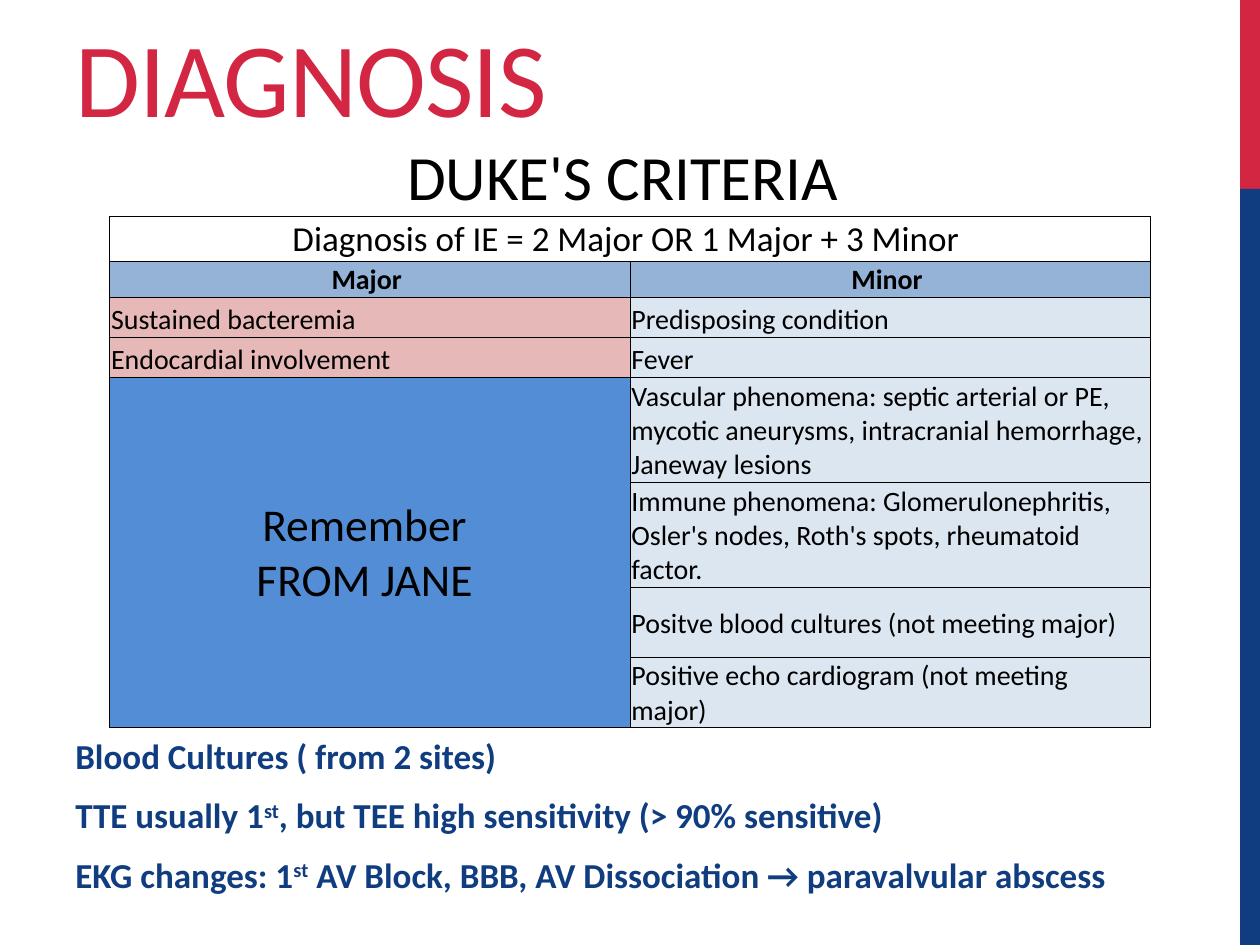
import pptx
import pptx.util
import pptx.dml.color
import pptx.enum.shapes
import pptx.enum.text
import pptx.oxml
import pptx.oxml.ns
from pptx.util import Cm, Pt

ANCHOR = pptx.enum.text.MSO_ANCHOR
ALIGN = pptx.enum.text.PP_ALIGN


def rgb(value):
    return pptx.dml.color.RGBColor.from_string(value)


def style(r, size, color, bold=False):
    r.font.name = "Calibri"
    r.font.size = Pt(size)
    r.font.bold = bold
    r.font.color.rgb = rgb(color)


prs = pptx.Presentation()
prs.slide_width, prs.slide_height = Cm(25.4), Cm(19.05)
s = prs.slides.add_slide(prs.slide_layouts[6])

# Side bars
for top, height, color in [(0, 3.81, "D22643"), (3.81, 15.24, "103D80")]:
    sp = s.shapes.add_shape(pptx.enum.shapes.MSO_SHAPE.RECTANGLE,
                            Cm(25), Cm(top), Cm(0.4), Cm(height))
    sp.shadow.inherit = False
    sp.fill.solid()
    sp.fill.fore_color.rgb = rgb(color)
    sp.line.fill.background()

# Title
tf = s.shapes.add_textbox(Cm(1.27), Cm(0.53), Cm(22.86), Cm(2.39)).text_frame
tf.word_wrap = True
tf.vertical_anchor = ANCHOR.BOTTOM
tf.text = "DIAGNOSIS"
r = tf.paragraphs[0].runs[0]
style(r, 60.3, "D22643")
r.font._element.set("spc", "-60")

# Notes below the table, with superscript ordinals
tf = s.shapes.add_textbox(Cm(1.27), Cm(14.68), Cm(22.86), Cm(4.24)).text_frame
tf.word_wrap = True
notes = [
    ["Blood Cultures ( from 2 sites)"],
    ["TTE usually 1", "st", ", but TEE high sensitivity (> 90% sensitive)"],
    ["EKG changes: 1", "st", " AV Block, BBB, AV Dissociation → paravalvular abscess"],
]
for i, parts in enumerate(notes):
    p = tf.paragraphs[0] if i == 0 else tf.add_paragraph()
    p.space_before, p.space_after = Pt(4), Pt(6)
    for part in parts:
        r = p.add_run()
        r.text = part
        style(r, 20, "103D80", bold=True)
        if part == "st":
            r.font._element.set("baseline", "30000")

# Criteria table: (text, size, fill, centred, anchor) for each cell
BLUE, PINK, PALE = "95B3D7", "E6B8B7", "DCE6F1"
MID, LOW = ANCHOR.MIDDLE, ANCHOR.BOTTOM
blank = ("", 16, None, False, MID)
rows = [
    (1.57, ("DUKE'S CRITERIA ", 36, None, True, LOW), blank),
    (0.9, ("Diagnosis of IE = 2 Major OR 1 Major + 3 Minor ", 20, None, True, LOW), blank),
    (0.72, ("Major ", 16, BLUE, True, MID), ("Minor ", 16, BLUE, True, MID)),
    (0.81, ("Sustained bacteremia", 16, PINK, False, LOW),
     ("Predisposing condition", 16, PALE, False, LOW)),
    (0.81, ("Endocardial involvement", 16, PINK, False, LOW), ("Fever", 16, PALE, False, LOW)),
    (2.12, ("Remember \nFROM JANE ", 26, "538DD5", True, MID),
     ("Vascular phenomena: septic arterial or PE, mycotic aneurysms, "
      "intracranial hemorrhage, Janeway lesions", 16, PALE, False, MID)),
    (2.12, blank, ("Immune phenomena: Glomerulonephritis, Osler's nodes, "
                   "Roth's spots, rheumatoid factor.", 16, PALE, False, MID)),
    (1.41, blank, ("Positve blood cultures (not meeting major)", 16, PALE, False, MID)),
    (1.41, blank, ("Positive echo cardiogram (not meeting major)", 16, PALE, False, MID)),
]
tbl = s.shapes.add_table(len(rows), 2, Cm(2.21), Cm(2.8), Cm(20.98),
                         Cm(sum(row[0] for row in rows))).table
tbl.first_row = tbl.horz_banding = False
for column in tbl.columns:
    column.width = Cm(10.49)

for i, (height, *cells) in enumerate(rows):
    tbl.rows[i].height = Cm(height)
    for j, (text, size, fill, centred, anchor) in enumerate(cells):
        c = tbl.cell(i, j)
        c.margin_left = c.margin_right = c.margin_top = Cm(0.03)
        c.margin_bottom = 0
        c.vertical_anchor = anchor
        c.text_frame.text = text
        for p in c.text_frame.paragraphs:
            p.alignment = ALIGN.CENTER if centred else ALIGN.LEFT
            for r in p.runs:
                style(r, size, "000000", bold=fill == BLUE)
        # Borders come before the fill in the cell properties
        for side in ["lnB"] if i == 0 else ["lnL", "lnR", "lnT", "lnB"]:
            c._tc.get_or_add_tcPr().append(pptx.oxml.parse_xml(
                f'<a:{side} {pptx.oxml.ns.nsdecls("a")} w="6350"><a:solidFill>'
                f'<a:srgbClr val="000000"/></a:solidFill></a:{side}>'))
        if fill:
            c.fill.solid()
            c.fill.fore_color.rgb = rgb(fill)
        else:
            c.fill.background()

for first, last in [((0, 0), (0, 1)), ((1, 0), (1, 1)), ((5, 0), (8, 0))]:
    tbl.cell(*first).merge(tbl.cell(*last))

prs.save("out.pptx")
